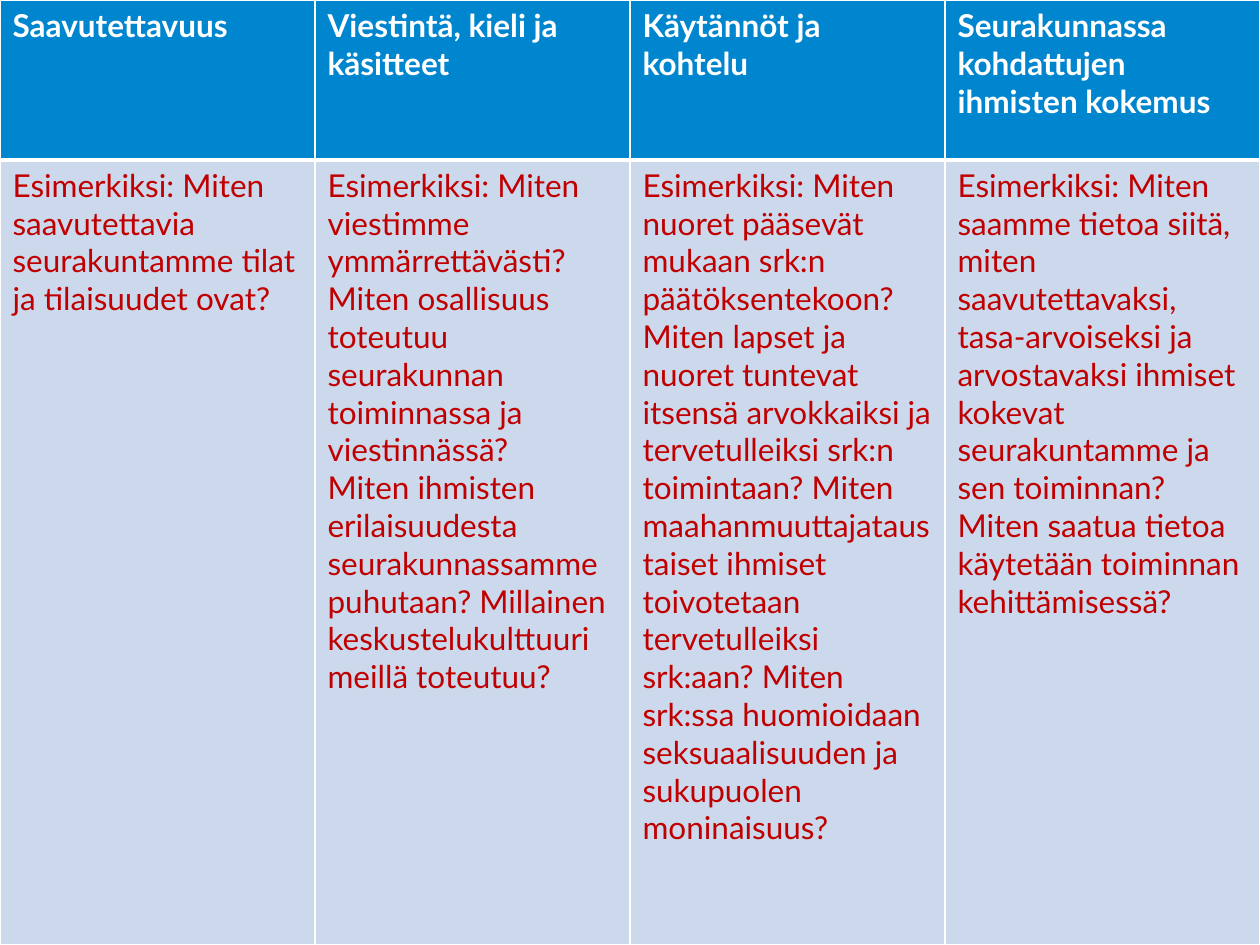
"""Build a slide with a four-column table of equality themes and example questions."""
import pptx
import pptx.dml.color
import pptx.oxml
import pptx.oxml.ns
import pptx.util
from dataclasses import dataclass

COLUMNS = [
    ("Saavutettavuus",
     ["Esimerkiksi: Miten saavutettavia seurakuntamme tilat ja tilaisuudet ovat?"]),
    ("Viestintä, kieli ja käsitteet",
     ["Esimerkiksi: Miten viestimme ymmärrettävästi? Miten osallisuus toteutuu "
      "seurakunnan toiminnassa ja viestinnässä?",
      "Miten ihmisten erilaisuudesta seurakunnassamme puhutaan? Millainen "
      "keskustelukulttuuri meillä toteutuu?"]),
    ("Käytännöt ja kohtelu",
     ["Esimerkiksi: Miten nuoret pääsevät mukaan srk:n päätöksentekoon? Miten lapset "
      "ja nuoret tuntevat itsensä arvokkaiksi ja tervetulleiksi srk:n toimintaan? "
      "Miten maahanmuuttajataustaiset ihmiset toivotetaan tervetulleiksi srk:aan? "
      "Miten srk:ssa huomioidaan seksuaalisuuden ja sukupuolen moninaisuus?"]),
    ("Seurakunnassa kohdattujen ihmisten kokemus",
     ["Esimerkiksi: Miten saamme tietoa siitä, miten saavutettavaksi, tasa-arvoiseksi "
      "ja arvostavaksi ihmiset kokevat seurakuntamme ja sen toiminnan? Miten saatua "
      "tietoa käytetään toiminnan kehittämisessä?"]),
]
WIDTH, HEIGHT, HEADER_HEIGHT = 10, 7.5, 1.27


@dataclass(frozen=True)
class Theme:
    font: str = "Lato"
    size: int = 18
    header_fill: str = "0085CF"
    header_text: str = "FFFFFF"
    body_fill: str = "CCD9ED"
    body_text: str = "C00000"
    border: str = "FFFFFF"
    thin: int = 1
    thick: int = 3


THEME = Theme()


def rgb(value):
    return pptx.dml.color.RGBColor.from_string(value)


def set_borders(cell, widths):
    tc_pr = cell._tc.get_or_add_tcPr()
    for i, (side, width) in enumerate(widths.items()):
        tc_pr.insert(i, pptx.oxml.parse_xml(
            f'<a:ln{side} {pptx.oxml.ns.nsdecls("a")} w="{pptx.util.Pt(width)}">'
            f'<a:solidFill><a:srgbClr val="{THEME.border}"/></a:solidFill></a:ln{side}>'))


def fill_cell(cell, paragraphs, fill, color, bold, widths):
    cell.fill.solid()
    cell.fill.fore_color.rgb = rgb(fill)
    set_borders(cell, widths)
    tf = cell.text_frame
    for i, text in enumerate(paragraphs):
        p = tf.add_paragraph() if i else tf.paragraphs[0]
        r = p.add_run()
        r.text = text
        r.font.name = THEME.font
        r.font.size = pptx.util.Pt(THEME.size)
        r.font.bold = bold
        r.font.color.rgb = rgb(color)


def main():
    Inches = pptx.util.Inches
    prs = pptx.Presentation()
    prs.slide_width, prs.slide_height = Inches(WIDTH), Inches(HEIGHT)
    s = prs.slides.add_slide(prs.slide_layouts[6])
    table = s.shapes.add_table(
        2, len(COLUMNS), 0, 0, Inches(WIDTH), Inches(HEIGHT)).table
    table.rows[0].height = Inches(HEADER_HEIGHT)
    table.rows[1].height = Inches(HEIGHT - HEADER_HEIGHT)
    thin = dict.fromkeys("LRTB", THEME.thin)
    for i, (heading, questions) in enumerate(COLUMNS):
        table.columns[i].width = Inches(WIDTH / len(COLUMNS))
        fill_cell(table.cell(0, i), [heading], THEME.header_fill,
                  THEME.header_text, True, {**thin, "B": THEME.thick})
        fill_cell(table.cell(1, i), questions, THEME.body_fill,
                  THEME.body_text, False, {**thin, "T": THEME.thick})
    prs.save("out.pptx")


if __name__ == "__main__":
    main()
